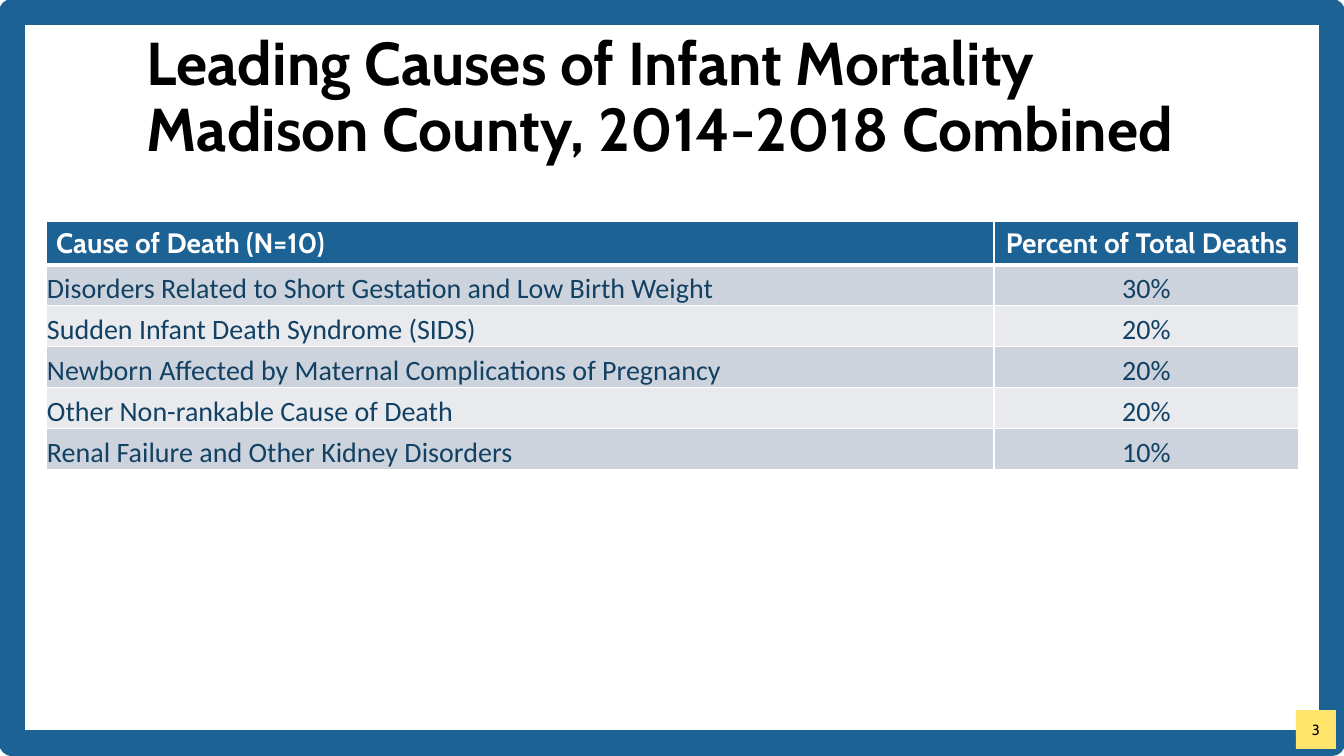
from lxml import etree
from pptx import Presentation
from pptx.dml.color import RGBColor
from pptx.enum.shapes import MSO_SHAPE
from pptx.enum.text import MSO_ANCHOR, PP_ALIGN
from pptx.oxml.ns import qn
from pptx.util import Emu, Pt

LEFT, CENTER = PP_ALIGN.LEFT, PP_ALIGN.CENTER
MIDDLE, TOP, BOTTOM = MSO_ANCHOR.MIDDLE, MSO_ANCHOR.TOP, MSO_ANCHOR.BOTTOM
RECTANGLE = MSO_SHAPE.RECTANGLE
EMU_PER_PX = 914400 / 100.8
COLORS = {
    "blue": "1C6294",
    "yellow": "FFE56B",
    "black": "000000",
    "white": "FFFFFF",
    "navy": "134163",
    "dark_band": "CDD3DC",
    "light_band": "E8EAEE",
}


def px(*lengths):
    return [Emu(round(length * EMU_PER_PX)) for length in lengths]


def write_text(frame, text, size, color, font="Cabin", bold=False, align=LEFT, spacing=1.0):
    paragraph = frame.paragraphs[0]
    paragraph.text = text
    paragraph.alignment = align
    paragraph.line_spacing = spacing
    for run in paragraph.runs:
        run.font.name = font
        run.font.size = Pt(size)
        run.font.bold = bold
        run.font.color.rgb = RGBColor.from_string(COLORS[color])


presentation = Presentation()
presentation.slide_width, presentation.slide_height = px(1344, 756)
slide = presentation.slides.add_slide(presentation.slide_layouts[6])

frame = slide.shapes.add_shape(RECTANGLE, *px(12, 12, 1320, 731))
frame.shadow.inherit = False
frame.fill.background()
frame.line.color.rgb = RGBColor.from_string(COLORS["blue"])
frame.line.width = Pt(19)

page_number = slide.shapes.add_shape(RECTANGLE, *px(1296, 710, 40, 39))
page_number.shadow.inherit = False
page_number.fill.solid()
page_number.fill.fore_color.rgb = RGBColor.from_string(COLORS["yellow"])
page_number.line.fill.background()
page_number.text_frame.vertical_anchor = MIDDLE
write_text(page_number.text_frame, "3", 10.5, "black", align=CENTER)

title = slide.shapes.add_textbox(*px(137, 46, 1253, 106))
title.text_frame.word_wrap = True
title.text_frame.vertical_anchor = MIDDLE
write_text(title.text_frame,
           "Leading Causes of Infant Mortality\vMadison County, 2014-2018 Combined",
           43.2, "black", bold=True, spacing=0.9)

causes = [
    ("Cause of Death (N=10)", "Percent of Total Deaths"),
    ("Disorders Related to Short Gestation and Low Birth Weight", "30%"),
    ("Sudden Infant Death Syndrome (SIDS)", "20%"),
    ("Newborn Affected by Maternal Complications of Pregnancy", "20%"),
    ("Other Non-rankable Cause of Death", "20%"),
    ("Renal Failure and Other Kidney Disorders", "10%"),
]
table = slide.shapes.add_table(len(causes), 2, *px(46, 221, 1253, 246)).table
for column, width in zip(table.columns, px(948, 305)):
    column.width = width

for row_index, row in enumerate(causes):
    is_header = row_index == 0
    table.rows[row_index].height = px(41)[0]
    band = "blue" if is_header else ("dark_band" if row_index % 2 else "light_band")
    for column_index, text in enumerate(row):
        cell = table.cell(row_index, column_index)
        properties = cell._tc.get_or_add_tcPr()
        for side in ("L", "R", "T", "B"):
            under_header = (row_index, side) in ((0, "B"), (1, "T"))
            border = etree.SubElement(properties, qn(f"a:ln{side}"),
                                      w=str(Pt(3 if under_header else 1)))
            border_fill = etree.SubElement(border, qn("a:solidFill"))
            etree.SubElement(border_fill, qn("a:srgbClr"), val=COLORS["white"])
        cell.fill.solid()
        cell.fill.fore_color.rgb = RGBColor.from_string(COLORS[band])
        cell.vertical_anchor = TOP if is_header else BOTTOM
        if not is_header:
            cell.margin_left, cell.margin_top, cell.margin_right, cell.margin_bottom = px(1, 1, 1, 0)
        write_text(cell.text_frame, text, 20,
                   "white" if is_header else "navy",
                   font="Cabin" if is_header else "Calibri",
                   bold=is_header, align=CENTER if column_index else LEFT)

presentation.save("out.pptx")
